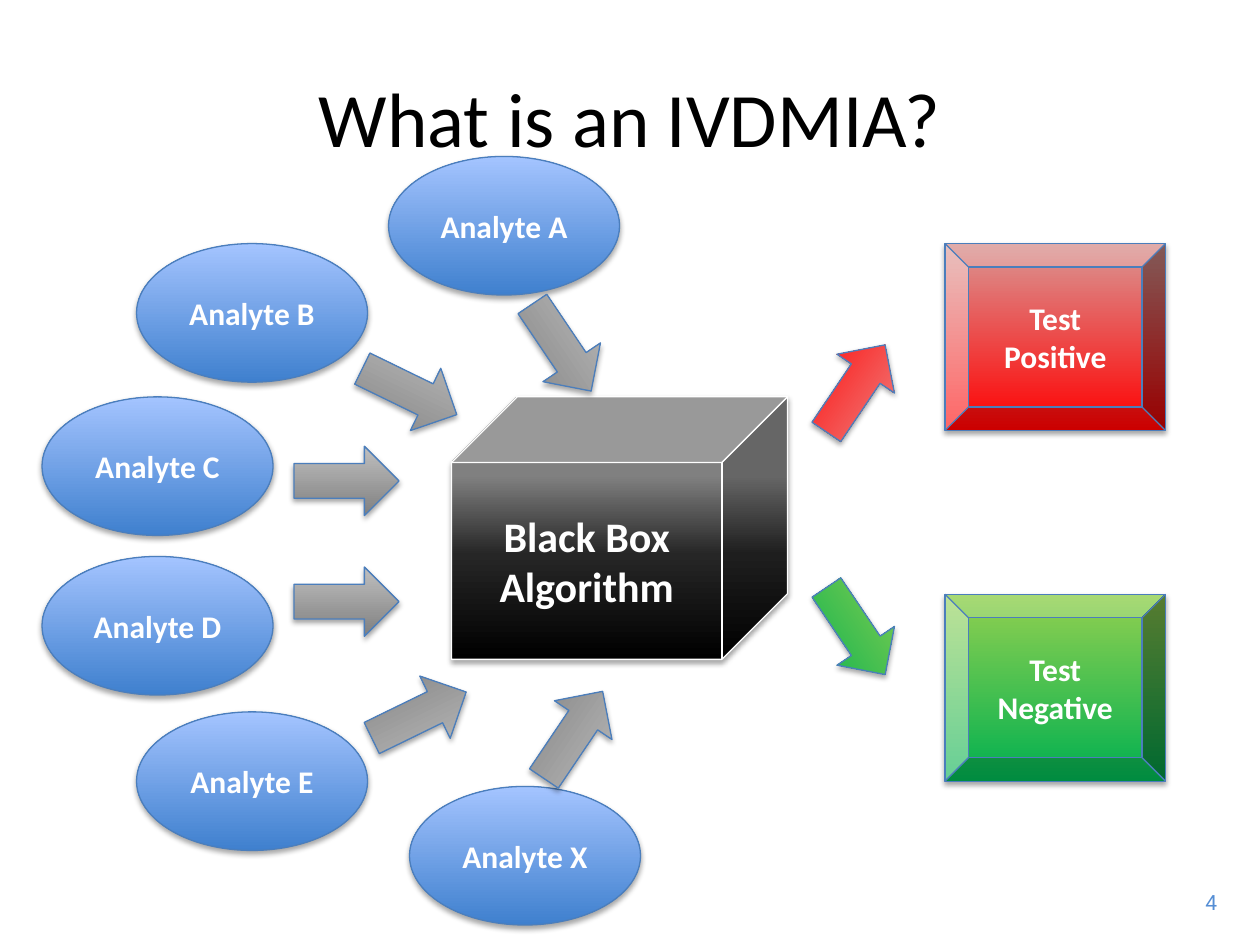
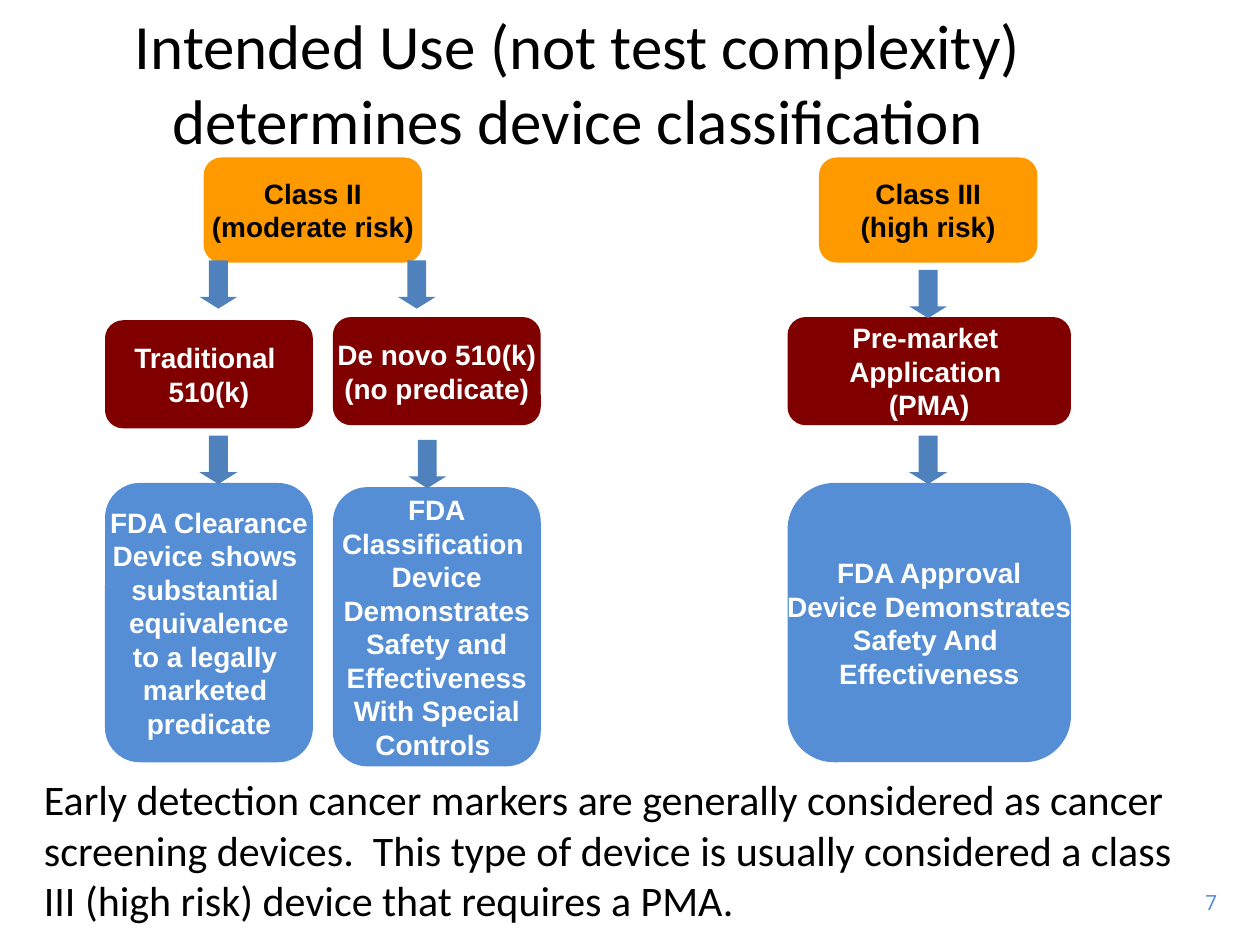
from pptx import Presentation
from pptx.dml.color import RGBColor
from pptx.enum.shapes import MSO_SHAPE
from pptx.enum.text import MSO_ANCHOR, MSO_AUTO_SIZE, PP_ALIGN
from pptx.oxml import parse_xml
from pptx.oxml.ns import nsdecls, qn
from pptx.util import Inches, Pt

WIDE, HIGH = Inches(10), Inches(7.5)
COLS, ROWS = 120, 90

BLACK, WHITE = "000000", "FFFFFF"
EDGE, BLUE, STEEL = "4B7EBC", "558ED5", "4F81BD"
AMBER, WINE = "FF9900", "800000"

SKY = [(0, "3F80CE"), (100, "A4C4FF")]
GREY = [(0, "808080"), (100, "BFBFBF")]
COAL = [(0, BLACK), (40, "262626"), (70, "808080"), (100, "808080")]
RED = [(0, "FF0000"), (100, "D99694")]
ROSE = [(0, "FF0000"), (100, "EC9492")]
GREEN = [(0, "00B050"), (100, "92D050")]


def place(left, top, width, height):
    return (round(left * WIDE / COLS), round(top * HIGH / ROWS),
            round(width * WIDE / COLS), round(height * HIGH / ROWS))


def tint(color, code):
    color.rgb = RGBColor.from_string(code)


def write(shape, lines, size, font="Calibri", code=BLACK, bold=False,
          align=PP_ALIGN.CENTER, anchor=MSO_ANCHOR.MIDDLE, wrap=True):
    frame = shape.text_frame
    frame.auto_size = MSO_AUTO_SIZE.NONE
    frame.word_wrap = wrap
    frame.vertical_anchor = anchor
    for index, line in enumerate(lines):
        para = frame.add_paragraph() if index else frame.paragraphs[0]
        para.alignment = align
        run = para.add_run()
        run.text = line
        run.font.name = font
        run.font.size = Pt(size)
        run.font.bold = bold
        tint(run.font.color, code)


def add_text(slide, area, text, size, **style):
    box = slide.shapes.add_textbox(*place(*area))
    write(box, [text], size, anchor=MSO_ANCHOR.TOP, **style)


def start(deck, title, area, size, anchor, page):
    slide = deck.slides.add_slide(deck.slide_layouts[5])
    head = slide.shapes.title
    head.left, head.top, head.width, head.height = place(*area)
    write(head, [title], size, anchor=anchor)
    add_text(slide, (112.2, 84.1, 4.9, 3.6), page, 12, font="Roboto",
             code=BLUE, align=PP_ALIGN.RIGHT)
    return slide


def add_flat(slide, kind, area, code):
    shape = slide.shapes.add_shape(kind, *place(*area))
    shape.shadow.inherit = False
    shape.fill.solid()
    tint(shape.fill.fore_color, code)
    shape.line.fill.background()
    return shape


def add_gloss(slide, kind, area, stops, edge=EDGE):
    shape = slide.shapes.add_shape(kind, *place(*area))
    shape.shadow.inherit = False
    tint(shape.line.color, edge)
    shape.line.width = Pt(0.75)
    props = shape._element.spPr
    marks = "".join(
        f'<a:gs pos="{pos * 1000}"><a:srgbClr val="{code}"/></a:gs>'
        for pos, code in stops)
    props.find(qn("a:prstGeom")).addnext(parse_xml(
        f'<a:gradFill {nsdecls("a")} rotWithShape="1"><a:gsLst>{marks}</a:gsLst>'
        '<a:lin ang="16200000" scaled="0"/></a:gradFill>'))
    props.find(qn("a:effectLst")).append(parse_xml(
        f'<a:outerShdw {nsdecls("a")} blurRad="{Pt(3.1)}" dist="{Pt(1.8)}" '
        'dir="5400000" rotWithShape="0"><a:srgbClr val="000000">'
        '<a:alpha val="35000"/></a:srgbClr></a:outerShdw>'))
    return shape


def add_label(slide, kind, area, stops, text, size=18, edge=EDGE):
    shape = add_gloss(slide, kind, area, stops, edge)
    write(shape, [text], size, code=WHITE, bold=True)


def add_arrow(slide, left, top, turn, stops=GREY):
    arrow = add_gloss(slide, MSO_SHAPE.RIGHT_ARROW, (left, top, 10, 6.6), stops)
    arrow.rotation = turn
    if turn > 180:
        arrow._element.spPr.xfrm.set("flipV", "1")


def add_card(slide, area, fill, lines, code=WHITE):
    card = add_flat(slide, MSO_SHAPE.ROUNDED_RECTANGLE, area, fill)
    card.adjustments[0] = 0.167
    write(card, lines, 16, "Arial", code, True, wrap=False)


def add_drop(slide, left, top):
    drop = add_flat(slide, MSO_SHAPE.DOWN_ARROW, (left, top, 3.6, 4.6), STEEL)
    drop.adjustments[0] = 0.5
    drop.adjustments[1] = 0.312


def draw_model(deck):
    slide = start(deck, "What is an IVDMIA?", (6, 3.6, 108, 15), 44,
                  MSO_ANCHOR.MIDDLE, "4")
    for name, left, top in [("B", 13, 23.2), ("C", 4, 37.8), ("D", 4, 53),
                            ("E", 13, 67.8), ("X", 39, 74.9), ("A", 37, 14.9)]:
        add_label(slide, MSO_SHAPE.OVAL, (left, top, 22, 13.2), SKY,
                  f"Analyte {name}")
    add_label(slide, MSO_SHAPE.CUBE, (43, 37.8, 32, 25), COAL,
              "Black Box Algorithm", 24, WHITE)
    for left, top, turn in [(48.5, 29.8, 56), (34, 34, 26), (28, 42.5, 0),
                            (28, 54, 0), (34.9, 64.8, 334), (49.6, 66.7, 304)]:
        add_arrow(slide, left, top, turn)
    add_arrow(slide, 76.5, 33.7, 304, ROSE)
    add_arrow(slide, 76.5, 56.8, 56, GREEN)
    for text, top, stops in [("Test Positive", 23.2, RED),
                             ("Test Negative", 56.6, GREEN)]:
        add_label(slide, MSO_SHAPE.BEVEL, (90, top, 21, 17.8), stops, text)


def draw_paths(deck):
    slide = start(deck, "Intended Use (not test complexity) determines device "
                  "classification", (4, 0, 102, 15.7), 36, MSO_ANCHOR.TOP, "7")
    for left, lines in [(19.4, ["Class II", "(moderate risk)"]),
                        (78, ["Class III", "(high risk)"])]:
        add_card(slide, (left, 15, 20.8, 10), AMBER, lines, BLACK)
    routes = [
        (10, 19.8, 30.5, 46, ["Traditional ", "510(k)"],
         ["FDA Clearance", "Device shows ", "substantial ", "equivalence",
          "to a legally ", "marketed ", "predicate"]),
        (31.7, 19.8, 30.2, 46.4, ["De novo 510(k)", "(no predicate)"],
         ["FDA", "Classification ", "Device", "Demonstrates", "Safety and",
          "Effectiveness", "With Special", "Controls "]),
        (75, 27, 30.2, 46, ["Pre-market ", "Application ", "(PMA)"],
         ["FDA Approval", "Device Demonstrates", "Safety And ",
          "Effectiveness"]),
    ]
    for left, width, top, base, step, goal in routes:
        add_card(slide, (left, top, width, 10.3), WINE, step)
        add_card(slide, (left, base, width, 26.6), BLUE, goal)
    for left, top in [(19, 24.8), (37.9, 24.8), (86.6, 25.7),
                      (19, 41.5), (38.9, 41.9), (86.6, 41.5)]:
        add_drop(slide, left, top)
    add_text(slide, (3, 73.1, 110, 15.7),
             "Early detection cancer markers are generally considered as cancer "
             "screening devices.  This type of device is usually considered a "
             "class III (high risk) device that requires a PMA.", 24,
             align=PP_ALIGN.LEFT)


def main():
    deck = Presentation()
    deck.slide_width, deck.slide_height = WIDE, HIGH
    draw_model(deck)
    draw_paths(deck)
    deck.save("out.pptx")


if __name__ == "__main__":
    main()
